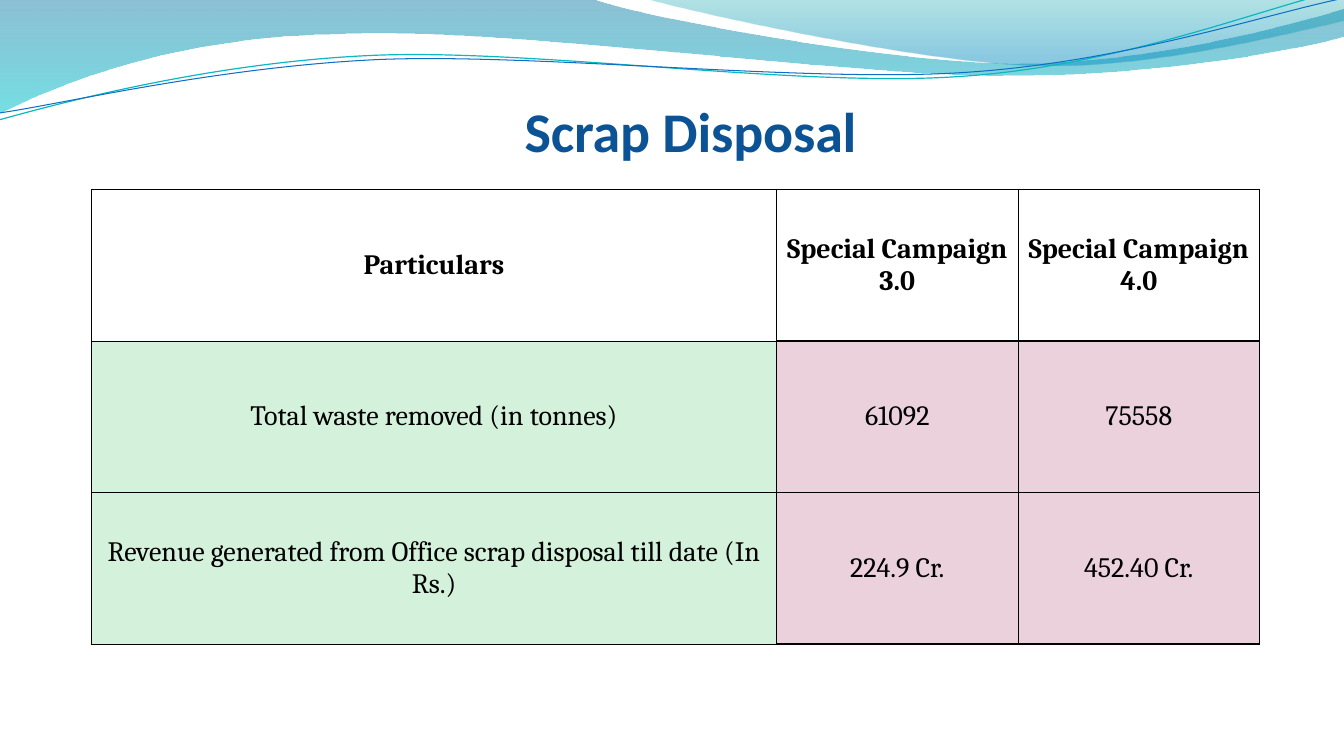
"""Build the Scrap Disposal slide with its wave header and comparison table."""
from math import cos, radians, sin

from lxml import etree
from pptx import Presentation
from pptx.dml.color import RGBColor
from pptx.enum.text import MSO_ANCHOR, PP_ALIGN
from pptx.oxml.ns import qn
from pptx.util import Inches, Pt

COLORS = {
    "title": "0B5394", "text": "000000", "label": "D3F1DB", "value": "EAD1DC",
    "teal": "0AB8BF", "blue": "0F6FC6",
}
TILT = 2.7


def add_curve(s, start, segments, close):
    """Draw a freeform from line ends (2 numbers) and Bezier curves (6 numbers)."""
    points = [(x, y) for seg in segments for x, y in zip(seg[::2], seg[1::2])]
    builder = s.shapes.build_freeform(Inches(start[0]), Inches(start[1]), scale=1.0)
    builder.add_line_segments([(Inches(x), Inches(y)) for x, y in points], close=close)
    sp = builder.convert_to_shape()
    sp.shadow.inherit = False
    lines = iter(list(sp._element.iter(qn("a:lnTo"))))
    for seg in segments:
        parts = [next(lines) for _ in range(len(seg) // 2)]
        if len(parts) == 3:
            curve = etree.Element(qn("a:cubicBezTo"))
            parts[0].addprevious(curve)
            for part in parts:
                curve.append(part[0])
                part.getparent().remove(part)
    return sp


def set_border(cell, widths):
    """Give a cell black borders; widths are points for left, right, top, bottom."""
    tcPr = cell._tc.get_or_add_tcPr()
    for i, (side, width) in enumerate(zip("LRTB", widths)):
        ln = etree.Element(qn(f"a:ln{side}"), w=str(Pt(width)))
        fill = etree.SubElement(ln, qn("a:solidFill"))
        etree.SubElement(fill, qn("a:srgbClr"), val=COLORS["text"])
        tcPr.insert(i, ln)


prs = Presentation()
prs.slide_width, prs.slide_height = Inches(13.33), Inches(7.5)
s = prs.slides.add_slide(prs.slide_layouts[5])

bands = [
    ((0, 0), [
        (5.87, -0.01), (6.34, 0.17, 8.85, 0.63, 10.11, 0.63),
        (11.38, 0.63, 12.78, 0.26, 13.33, 0.09), (13.35, 0.36),
        (13.11, 0.44, 11.6, 0.76, 9.94, 0.75), (8.29, 0.75, 5.09, 0.28, 3.43, 0.34),
        (1.72, 0.36, 0.61, 0.83, -0.01, 1.13),
    ], [(0, "0074A1", 45), (1, "00C6CF", 55)]),
    ((6.39, -0.01), [
        (6.79, 0.11, 9.09, 0.62, 10.25, 0.65),
        (11.41, 0.69, 12.82, 0.32, 13.33, 0.21), (13.33, 0),
    ], [(0, "00A1A9", 30), (0.8, "008BBF", 45)]),
]
for start, segments, stops in bands:
    sp = add_curve(s, start, segments, True)
    sp.line.fill.background()
    sp.fill.gradient()
    sp.fill.gradient_angle = 270
    for stop, (position, color, _) in zip(sp.fill.gradient_stops, stops):
        stop.position = position
        stop.color.rgb = RGBColor.from_string(color)
    for clr, (_, _, opacity) in zip(sp._element.spPr.iter(qn("a:srgbClr")), stops):
        etree.SubElement(clr, qn("a:alpha"), val=str(opacity * 1000))

waves = [
    ((6.65, 0.57), [
        (-0.01, 1.19),
        (0.64, 1.01), (2.11, 0.62), (3.69, 0.55), (5.27, 0.48), (7.9, 0.87), (9.5, 0.76),
        (11.1, 0.66), (12.52, 0.08), (13.31, -0.1),
    ], "teal", 0.85),
    ((6.67, 0.59), [
        (0, 1.12),
        (0.63, 1.03), (2.18, 0.66), (3.78, 0.59), (5.37, 0.53), (7.96, 0.82), (9.55, 0.72),
        (11.15, 0.62), (12.55, 0.14), (13.34, -0.02),
    ], "blue", 0.75),
]
c, d = cos(radians(TILT)), sin(radians(TILT))
for (cx, cy), points, color, width in waves:
    level = [(cx + (x - cx) * c - (y - cy) * d, cy + (x - cx) * d + (y - cy) * c)
             for x, y in points]
    segments = [sum(level[i:i + 3], ()) for i in range(1, len(level), 3)]
    sp = add_curve(s, level[0], segments, False)
    sp.rotation = 360 - TILT
    sp.fill.background()
    sp.line.color.rgb = RGBColor.from_string(COLORS[color])
    sp.line.width = Pt(width)

title = s.shapes.title
title.left, title.top = Inches(0.96), Inches(1.08)
title.width, title.height = Inches(11.5), Inches(0.55)
tf = title.text_frame
tf.text = "Scrap Disposal"
tf.vertical_anchor = MSO_ANCHOR.MIDDLE
tf.margin_left = tf.margin_right = tf.margin_top = tf.margin_bottom = 0
p = tf.paragraphs[0]
p.alignment = PP_ALIGN.CENTER
p.line_spacing = Pt(38.2)
p._p.get_or_add_pPr().set("marL", str(Inches(0.28)))
r = p.runs[0]
r.font.name, r.font.size, r.font.bold = "Calibri", Pt(40), True
r.font.color.rgb = RGBColor.from_string(COLORS["title"])
r._r.get_or_add_rPr().set("spc", "-10")

rows = [
    ("Particulars", "Special Campaign 3.0", "Special Campaign 4.0"),
    ("Total waste removed (in tonnes)", "61092", "75558"),
    ("Revenue generated from Office scrap disposal till date (In Rs.)", "224.9 Cr.", "452.40 Cr."),
]
table = s.shapes.add_table(3, 3, Inches(0.91), Inches(1.88), Inches(11.58), Inches(4.51)).table
table.first_row = table.horz_banding = False
for column, width in zip(table.columns, (6.79, 2.4, 2.39)):
    column.width = Inches(width)
for i, row in enumerate(rows):
    for j, text in enumerate(row):
        cell = table.cell(i, j)
        cell.text = text
        cell.vertical_anchor = MSO_ANCHOR.MIDDLE
        cell.margin_left = cell.margin_right = cell.margin_top = cell.margin_bottom = 0
        if i == 0:
            cell.fill.background()
        else:
            cell.fill.solid()
            cell.fill.fore_color.rgb = RGBColor.from_string(COLORS["value" if j else "label"])
        set_border(cell, (1, 1, 1, 1) if j else (0.5, 1, 0.5, 0.5))
        p = cell.text_frame.paragraphs[0]
        p.alignment = PP_ALIGN.CENTER
        font = p.runs[0].font
        font.name, font.size, font.bold = "Cambria", Pt(20), i == 0
        font.color.rgb = RGBColor.from_string(COLORS["text"])

prs.save("out.pptx")
